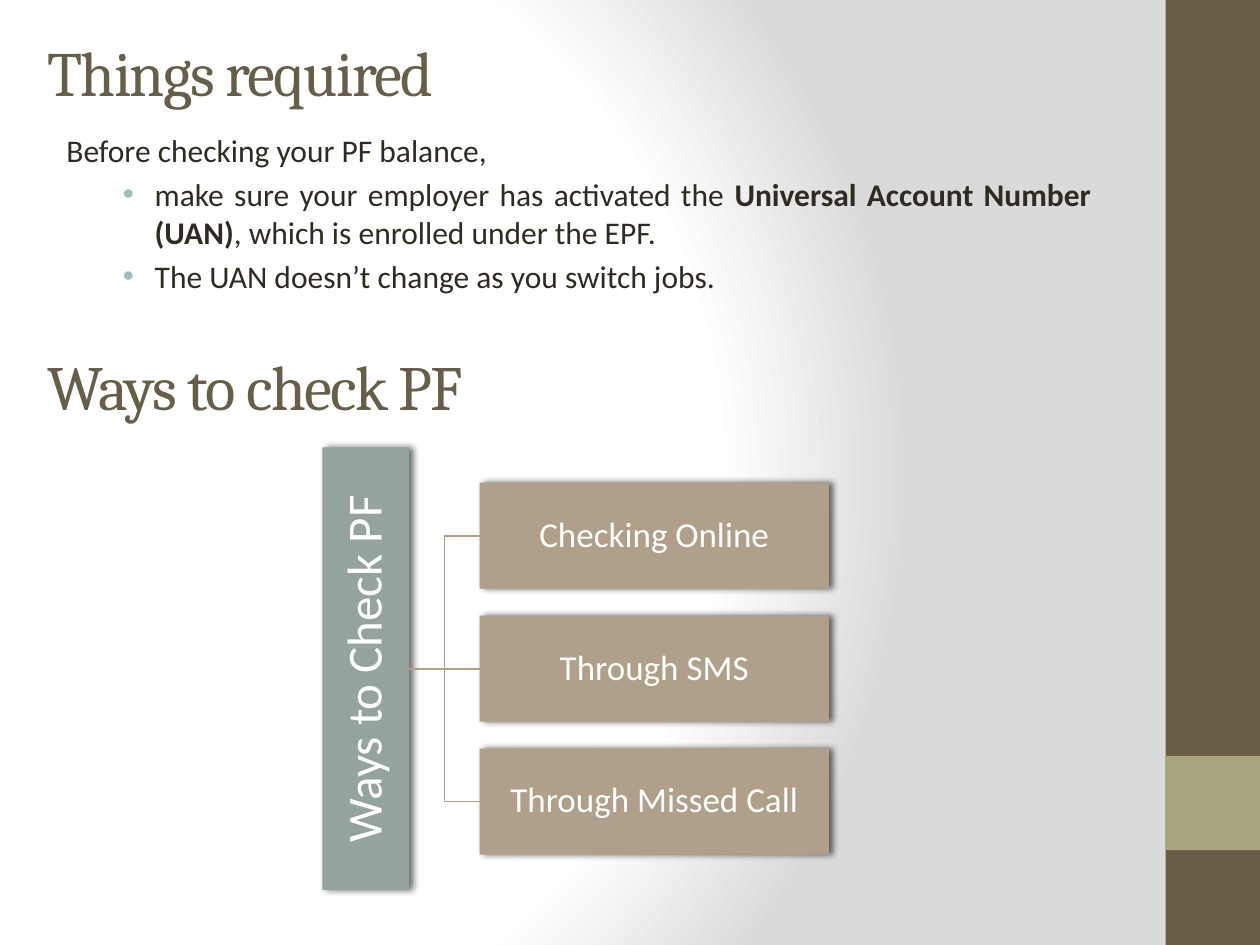
"""Builds the slide on checking a PF balance."""
from lxml.etree import SubElement
from pptx import Presentation
from pptx.dml.color import RGBColor
from pptx.enum.shapes import MSO_CONNECTOR, MSO_SHAPE
from pptx.enum.text import MSO_ANCHOR, PP_ALIGN
from pptx.oxml import parse_xml
from pptx.oxml.ns import nsdecls, qn
from pptx.util import Cm, Pt

BROWN = RGBColor(0x67, 0x5E, 0x47)
OLIVE = RGBColor(0xA9, 0xA5, 0x7C)
INK = RGBColor(0x2F, 0x2B, 0x20)
TEAL = RGBColor(0x9C, 0xBE, 0xBD)
SAGE = RGBColor(0x95, 0xA3, 0x9D)
TAN = RGBColor(0xB1, 0xA0, 0x89)
WHITE = RGBColor(0xFF, 0xFF, 0xFF)
GREY = RGBColor(0xDA, 0xDA, 0xDA)


def add_run(paragraph, text, *, size=18, color=INK, font="Calibri", bold=False, tracking=0):
    run = paragraph.add_run()
    run.text = text
    run.font.size = Pt(size)
    run.font.name = font
    run.font.bold = bold
    run.font.color.rgb = color
    if tracking:
        run.font._element.set("spc", str(tracking * 100))


class SlideBuilder:
    def __init__(self, slide):
        self.slide = slide
        self.shapes = slide.shapes

    def backdrop(self):
        stops = "".join(
            f'<a:gs pos="{pos * 1000}"><a:srgbClr val="{color}"/></a:gs>'
            for pos, color in ((0, WHITE), (75, WHITE), (100, GREY))
        )
        background = parse_xml(
            f'<p:bg {nsdecls("p", "a")}><p:bgPr><a:gradFill rotWithShape="1">'
            f'<a:gsLst>{stops}</a:gsLst><a:path path="circle">'
            '<a:fillToRect l="20000" t="50000" r="100000" b="50000"/></a:path>'
            "</a:gradFill><a:effectLst/></p:bgPr></p:bg>"
        )
        self.slide.element.find(qn("p:cSld")).insert(0, background)

    def block(self, left, top, width, height, color):
        block = self.shapes.add_shape(
            MSO_SHAPE.RECTANGLE, Cm(left), Cm(top), Cm(width), Cm(height))
        block.fill.solid()
        block.fill.fore_color.rgb = color
        block.line.fill.background()
        block.shadow.inherit = False
        return block

    def node(self, left, top, width, height, color, text, size, upward=False):
        node = self.block(left, top, width, height, color)
        effects = node._element.spPr.find(qn("a:effectLst"))
        effects.append(parse_xml(
            f'<a:outerShdw {nsdecls("a")} blurRad="{Pt(4)}" dist="{Pt(2)}" dir="0" '
            'rotWithShape="0"><a:srgbClr val="000000"><a:alpha val="60000"/>'
            "</a:srgbClr></a:outerShdw>"
        ))
        frame = node.text_frame
        frame.word_wrap = True
        frame.vertical_anchor = MSO_ANCHOR.MIDDLE
        frame.margin_left = frame.margin_right = Cm(0.03)
        frame.margin_top = frame.margin_bottom = Cm(0.03)
        if upward:
            frame._txBody.bodyPr.set("vert", "vert270")
        label = frame.paragraphs[0]
        label.alignment = PP_ALIGN.CENTER
        label.line_spacing = 0.9
        add_run(label, text, size=size, color=WHITE)
        return node

    def text_frame(self, left, top, width, height):
        frame = self.shapes.add_textbox(
            Cm(left), Cm(top), Cm(width), Cm(height)).text_frame
        frame.word_wrap = True
        return frame

    def heading(self, left, top, width, height, text):
        frame = self.text_frame(left, top, width, height)
        frame.vertical_anchor = MSO_ANCHOR.MIDDLE
        add_run(frame.paragraphs[0], text, size=36, color=BROWN, font="Cambria", tracking=-1)

    def body(self, left, top, width, height, intro, bullets):
        frame = self.text_frame(left, top, width, height)
        for index, parts in enumerate([intro, *bullets]):
            paragraph = frame.add_paragraph() if index else frame.paragraphs[0]
            paragraph.alignment = PP_ALIGN.JUSTIFY
            paragraph.level = 1
            paragraph.space_before = Pt(3.6)
            properties = paragraph._p.get_or_add_pPr()
            properties.set("marL", str(Cm(1.78) if index else 0))
            properties.set("indent", str(Cm(-0.64) if index else 0))
            if index:
                bullet_color = SubElement(properties, qn("a:buClr"))
                SubElement(bullet_color, qn("a:srgbClr"), val=str(TEAL))
                SubElement(properties, qn("a:buFont"), typeface="Arial")
                SubElement(properties, qn("a:buChar"), char="•")
            for text, bold in parts:
                add_run(paragraph, text, bold=bold)

    def link(self, root, branch, kind):
        link = self.shapes.add_connector(kind, 0, 0, 0, 0)
        link.begin_connect(root, 3)
        link.end_connect(branch, 1)
        link.line.color.rgb = TAN
        link.line.width = Pt(1)
        SubElement(link._element.spPr, qn("a:effectLst"))


def main():
    presentation = Presentation()
    presentation.slide_width, presentation.slide_height = Cm(25.4), Cm(19.05)
    builder = SlideBuilder(presentation.slides.add_slide(presentation.slide_layouts[6]))

    builder.backdrop()
    builder.block(23.5, 0, 1.9, 19.05, BROWN)
    builder.block(23.5, 15.24, 1.9, 1.9, OLIVE)

    builder.heading(0.71, 0.33, 21.16, 2.21, "Things required")
    builder.body(
        1.09, 2.51, 21.16, 4.47,
        [("Before checking your PF balance,", False)],
        [
            [("make sure your employer has activated the ", False),
             ("Universal Account Number (UAN)", True),
             (", which is enrolled under the EPF.", False)],
            [("The UAN doesn’t change as you switch jobs.", False)],
        ],
    )

    builder.heading(0.71, 7.01, 20.88, 1.52, "Ways to check PF")
    root = builder.node(6.5, 9.02, 1.75, 8.92, SAGE, "Ways to Check PF", 28, upward=True)
    ways = [
        ("Checking Online", MSO_CONNECTOR.ELBOW),
        ("Through SMS", MSO_CONNECTOR.STRAIGHT),
        ("Through Missed Call", MSO_CONNECTOR.ELBOW),
    ]
    for row, (way, kind) in enumerate(ways):
        branch = builder.node(9.67, 9.73 + 2.68 * row, 7.04, 2.14, TAN, way, 20)
        builder.link(root, branch, kind)

    presentation.save("out.pptx")


if __name__ == "__main__":
    main()
